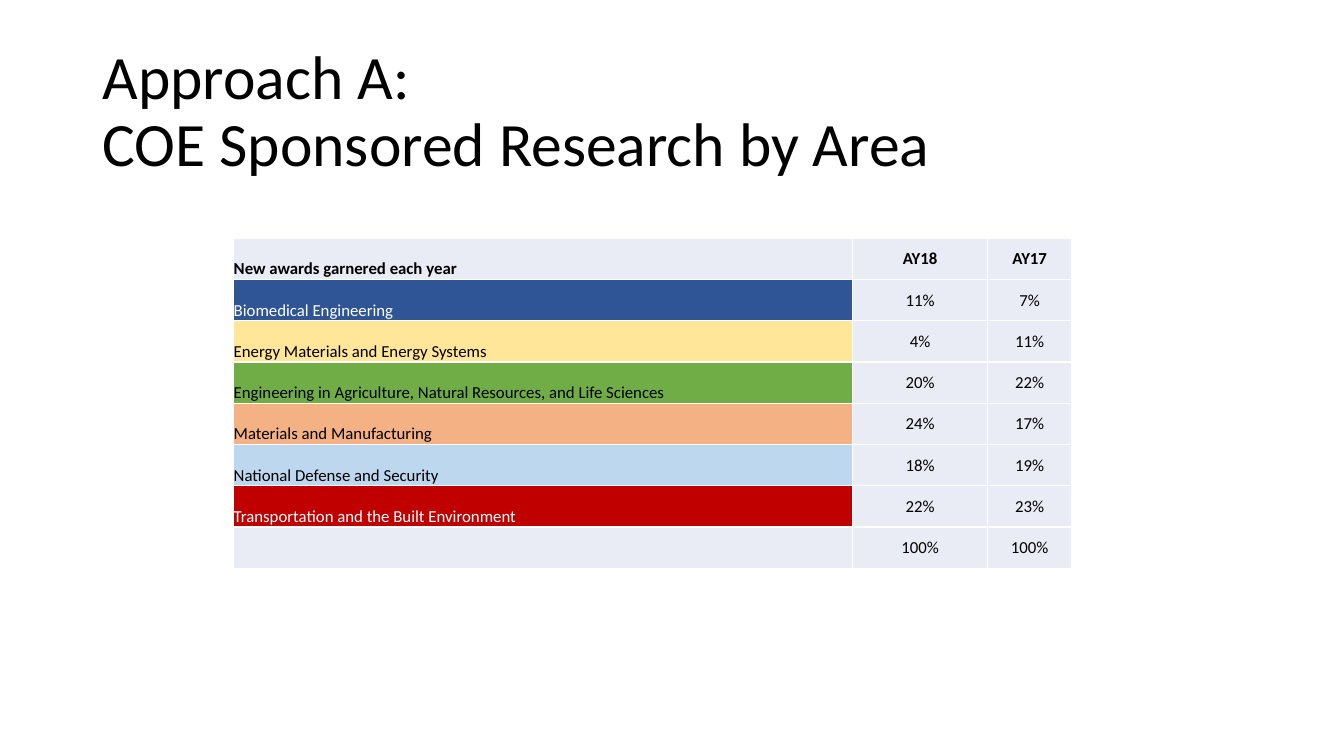
from dataclasses import dataclass

from lxml.etree import SubElement
from pptx import Presentation
from pptx.dml.color import RGBColor
from pptx.enum.text import MSO_ANCHOR, PP_ALIGN
from pptx.oxml.ns import qn
from pptx.util import Cm, Pt

# Content
TITLE = "Approach A:\vCOE Sponsored Research by Area"
HEADER = ("New awards garnered each year", "AY18", "AY17")
AREAS = [
    # area, AY18, AY17, area fill, area text
    ("Biomedical Engineering", "11%", "7%", "2F5597", "FFFFFF"),
    ("Energy Materials and Energy Systems", "4%", "11%", "FFE699", "000000"),
    ("Engineering in Agriculture, Natural Resources, and Life Sciences",
     "20%", "22%", "70AD47", "000000"),
    ("Materials and Manufacturing", "24%", "17%", "F4B183", "000000"),
    ("National Defense and Security", "18%", "19%", "BDD7EE", "000000"),
    ("Transportation and the Built Environment", "22%", "23%", "C00000", "FFFFFF"),
]
TOTAL = ("", "100%", "100%")


@dataclass(frozen=True)
class Theme:
    font: str = "Calibri"
    text: str = "000000"
    cell: str = "E9EBF5"
    border: str = "FFFFFF"
    title_size: int = 44
    table_size: int = 12
    border_width: int = 1


THEME = Theme()
COLUMN_WIDTHS = (Cm(15.62), Cm(3.4), Cm(2.12))
ROW_HEIGHT = Cm(1.04)


def format_runs(paragraph, size, color, bold=False):
    for run in paragraph.runs:
        run.font.name = THEME.font
        run.font.size = Pt(size)
        run.font.bold = bold
        run.font.color.rgb = RGBColor.from_string(color)


def add_borders(cell):
    properties = cell._tc.get_or_add_tcPr()
    for side in ("lnL", "lnR", "lnT", "lnB"):
        line = SubElement(properties, qn(f"a:{side}"), w=str(Pt(THEME.border_width)))
        fill = SubElement(line, qn("a:solidFill"))
        SubElement(fill, qn("a:srgbClr"), val=THEME.border)


def fill_cell(cell, text, is_area, fill, color, bold):
    cell.margin_left = cell.margin_right = cell.margin_top = Cm(0.02)
    cell.margin_bottom = 0
    cell.vertical_anchor = MSO_ANCHOR.BOTTOM if is_area else MSO_ANCHOR.MIDDLE
    add_borders(cell)
    cell.fill.solid()
    cell.fill.fore_color.rgb = RGBColor.from_string(fill)
    cell.text_frame.text = text
    paragraph = cell.text_frame.paragraphs[0]
    paragraph.alignment = PP_ALIGN.LEFT if is_area else PP_ALIGN.CENTER
    format_runs(paragraph, THEME.table_size, color, bold)


def add_title(slide):
    title = slide.shapes.title
    title.left, title.top = Cm(2.33), Cm(1.01)
    title.width, title.height = Cm(29.21), Cm(3.68)
    title.text_frame.text = TITLE
    title.text_frame.vertical_anchor = MSO_ANCHOR.MIDDLE
    paragraph = title.text_frame.paragraphs[0]
    paragraph.alignment = PP_ALIGN.LEFT
    paragraph.line_spacing = 0.9
    format_runs(paragraph, THEME.title_size, THEME.text)


def add_awards_table(slide):
    plain = (THEME.cell, THEME.text)
    rows = [HEADER + plain, *AREAS, TOTAL + plain]
    frame = slide.shapes.add_table(
        len(rows), len(COLUMN_WIDTHS), Cm(5.87), Cm(6),
        sum(COLUMN_WIDTHS), ROW_HEIGHT * len(rows))
    table = frame.table
    for column, width in zip(table.columns, COLUMN_WIDTHS):
        column.width = width
    for row_index, (*texts, area_fill, area_color) in enumerate(rows):
        table.rows[row_index].height = ROW_HEIGHT
        for column_index, text in enumerate(texts):
            is_area = column_index == 0
            fill, color = (area_fill, area_color) if is_area else plain
            fill_cell(table.cell(row_index, column_index), text, is_area,
                      fill, color, bold=row_index == 0)


def main():
    presentation = Presentation()
    presentation.slide_width, presentation.slide_height = Cm(33.87), Cm(19.05)
    # Title Only layout
    slide = presentation.slides.add_slide(presentation.slide_layouts[5])
    add_title(slide)
    add_awards_table(slide)
    presentation.save("out.pptx")


if __name__ == "__main__":
    main()
